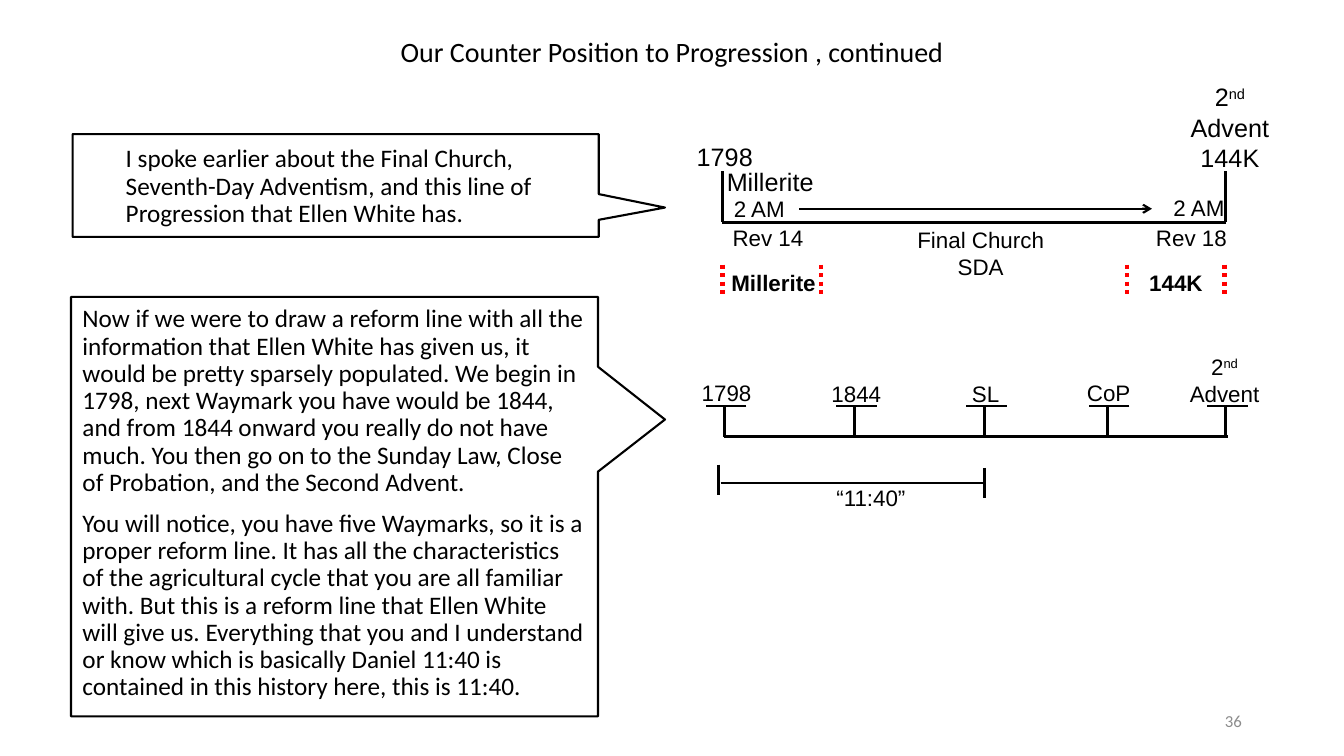
from dataclasses import dataclass

from lxml import etree
from pptx import Presentation
from pptx import util as u
from pptx.dml.color import RGBColor
from pptx.enum import dml, shapes, text
from pptx.oxml.ns import qn


@dataclass(frozen=True)
class Theme:
    ink: str = "000000"
    accent: str = "FF0000"
    muted: str = "8C8C8C"
    prose_font: str = "Calibri"
    label_font: str = "Arial"
    title: int = 20
    prose: int = 18
    label_large: int = 18
    label: int = 16
    footer: int = 12
    thin: float = 1.5
    medium: float = 2
    thick: float = 3


class SlideBuilder:
    def __init__(self, page, theme):
        self.page = page
        self.theme = theme

    def span(self, para, words, size, font, color=None, bold=False, raised=False):
        span = para.add_run()
        span.text = words
        span.font.name = font
        span.font.size = u.Pt(size)
        span.font.bold = bold
        span.font.color.rgb = RGBColor.from_string(color or self.theme.ink)
        if raised:
            span._r.get_or_add_rPr().set("baseline", "30000")

    def title(self, words, left, top, width, height):
        box = self.page.shapes.title
        box.left, box.top = u.Cm(left), u.Cm(top)
        box.width, box.height = u.Cm(width), u.Cm(height)
        box.text_frame.vertical_anchor = text.MSO_ANCHOR.MIDDLE
        para = box.text_frame.paragraphs[0]
        para.alignment = text.PP_ALIGN.CENTER
        para.line_spacing = 0.9
        self.span(para, words, self.theme.title, self.theme.prose_font)

    def frame(self, left, top, width, height):
        box = self.page.shapes.add_textbox(u.Cm(left), u.Cm(top), u.Cm(width), u.Cm(height))
        box.text_frame.word_wrap = True
        return box.text_frame

    def prose(self, paragraphs, *place):
        frame = self.frame(*place)
        for index, words in enumerate(paragraphs):
            para = frame.add_paragraph() if index else frame.paragraphs[0]
            para.line_spacing = 0.9
            para.space_before = u.Pt(10)
            self.span(para, words, self.theme.prose, self.theme.prose_font)

    def label(self, lines, *place, size=None, bold=False):
        """Each line is a list of pieces; "nd" is set as a superscript."""
        frame = self.frame(*place)
        frame.margin_left = frame.margin_right = u.Cm(0.1)
        frame.margin_top = frame.margin_bottom = u.Cm(0.1)
        for index, pieces in enumerate(lines):
            para = frame.add_paragraph() if index else frame.paragraphs[0]
            para.alignment = text.PP_ALIGN.CENTER
            for words in pieces:
                self.span(para, words, size or self.theme.label, self.theme.label_font,
                          bold=bold, raised=words == "nd")

    def page_number(self, words, *place):
        frame = self.frame(*place)
        frame.vertical_anchor = text.MSO_ANCHOR.MIDDLE
        para = frame.paragraphs[0]
        para.alignment = text.PP_ALIGN.RIGHT
        self.span(para, words, self.theme.footer, self.theme.prose_font, self.theme.muted)

    def line(self, x1, y1, x2, y2, weight=None, color=None, dotted=False, arrow=False):
        line = self.page.shapes.add_connector(
            shapes.MSO_CONNECTOR.STRAIGHT, u.Cm(x1), u.Cm(y1), u.Cm(x2), u.Cm(y2))
        line.line.width = u.Pt(weight or self.theme.medium)
        line.line.color.rgb = RGBColor.from_string(color or self.theme.ink)
        if dotted:
            line.line.dash_style = dml.MSO_LINE.ROUND_DOT
        if arrow:
            etree.SubElement(line.line._get_or_add_ln(), qn("a:tailEnd"), type="arrow")
        etree.SubElement(line._element.spPr, qn("a:effectLst"))

    def callout(self, left, top, width, height, tip_x, tip_y):
        """Callout turned by 270 degrees, so its own width is the visible height."""
        middle_x, middle_y = left + width / 2, top + height / 2
        box = self.page.shapes.add_shape(
            shapes.MSO_SHAPE.RECTANGULAR_CALLOUT,
            u.Cm(middle_x - height / 2), u.Cm(middle_y - width / 2),
            u.Cm(height), u.Cm(width))
        box.rotation = 270
        box.adjustments[0] = (middle_y - tip_y) / height
        box.adjustments[1] = (tip_x - middle_x) / width
        box.shadow.inherit = False
        box.fill.background()
        box.line.width = u.Pt(self.theme.thin)
        box.line.color.rgb = RGBColor.from_string(self.theme.ink)


def main():
    deck = Presentation()
    deck.slide_width, deck.slide_height = u.Cm(33.87), u.Cm(19.05)
    theme = Theme()
    slide = SlideBuilder(deck.slides.add_slide(deck.slide_layouts[5]), theme)

    # Title and page number
    slide.title("Our Counter Position to Progression , continued", 0, 0.71, 33.87, 1.27)
    slide.page_number("36", 23.93, 17.65, 7.62, 1.02)

    # Commentary in callouts
    slide.prose(["I spoke earlier about the Final Church, Seventh-Day Adventism, and this "
                 "line of Progression that Ellen White has."], 2.92, 3.56, 10.8, 2.16)
    slide.prose([
        "Now if we were to draw a reform line with all the information that Ellen White has "
        "given us, it would be pretty sparsely populated. We begin in 1798, next Waymark you "
        "have would be 1844, and from 1844 onward you really do not have much. You then go on "
        "to the Sunday Law, Close of Probation, and the Second Advent.",
        "You will notice, you have five Waymarks, so it is a proper reform line. It has all "
        "the characteristics of the agricultural cycle that you are all familiar with. But "
        "this is a reform line that Ellen White will give us. Everything that you and I "
        "understand or know which is basically Daniel 11:40 is contained in this history "
        "here, this is 11:40.",
    ], 1.83, 7.59, 13.18, 10.24)
    slide.callout(1.83, 3.38, 13.26, 2.59, 16.76, 5.23)
    slide.callout(1.79, 7.48, 13.28, 10.57, 16.76, 10.57)

    # Progression line
    slide.line(18.19, 5.61, 30.89, 5.61)
    for x in (18.21, 30.89):
        slide.line(x, 4.31, x, 5.59)
    slide.line(20.14, 5.26, 29.03, 5.26, theme.thin, arrow=True)
    large = theme.label_large
    slide.label([["1798"]], 17.45, 3.45, 1.63, 1.04, size=large)
    slide.label([["Millerite"]], 18.14, 4.09, 2.54, 0.94, size=large)
    slide.label([["2", "nd", " Advent"], ["144K"]], 29.74, 1.96, 2.51, 2.36, size=large)
    slide.label([["2 AM"]], 18.26, 4.83, 1.75, 0.84)
    slide.label([["2 AM"]], 29.39, 4.8, 1.65, 0.89)
    slide.label([["Rev 14"]], 18.34, 5.56, 2.03, 0.89)
    slide.label([["Rev 18"]], 29.01, 5.54, 2.03, 0.89)
    slide.label([["Final Church SDA"]], 22.66, 5.59, 4.11, 1.5)

    # Dotted limits of the first and last periods
    for x in (18.21, 20.68, 28.4, 30.86):
        slide.line(x, 6.67, x, 7.43, theme.thick, theme.accent, dotted=True)
    slide.label([["Millerite"]], 18.29, 6.68, 2.41, 0.97, bold=True)
    slide.label([["144K"]], 28.85, 6.68, 1.57, 0.89, bold=True)

    # Reform line with five waymarks: x, text, label middle, top, width, height
    slide.line(18.24, 11, 30.94, 11)
    waymarks = [
        (18.26, ["1798"], 18.31, 9.45, 1.52, 0.81),
        (21.54, ["1844"], 21.58, 9.47, 1.5, 0.79),
        (24.82, ["SL"], 24.84, 9.47, 1.02, 0.91),
        (27.91, ["CoP"], 27.94, 9.45, 1.68, 0.81),
        (30.89, ["2", "nd", " Advent"], 30.86, 8.79, 2.24, 1.63),
    ]
    for x, pieces, middle, top, width, height in waymarks:
        slide.label([pieces], middle - width / 2, top, width, height)
        slide.line(x + 0.55, 10.23, x - 0.47, 10.23)
        slide.line(x, 10.24, x, 11)

    # Span of 11:40
    slide.line(18.11, 11.71, 18.11, 12.47)
    slide.line(24.82, 11.79, 24.82, 12.55)
    slide.line(18.16, 12.17, 24.84, 12.17, theme.thin)
    slide.label([["“11:40”"]], 20.68, 12.09, 2.54, 0.89)

    deck.save("out.pptx")


if __name__ == "__main__":
    main()
